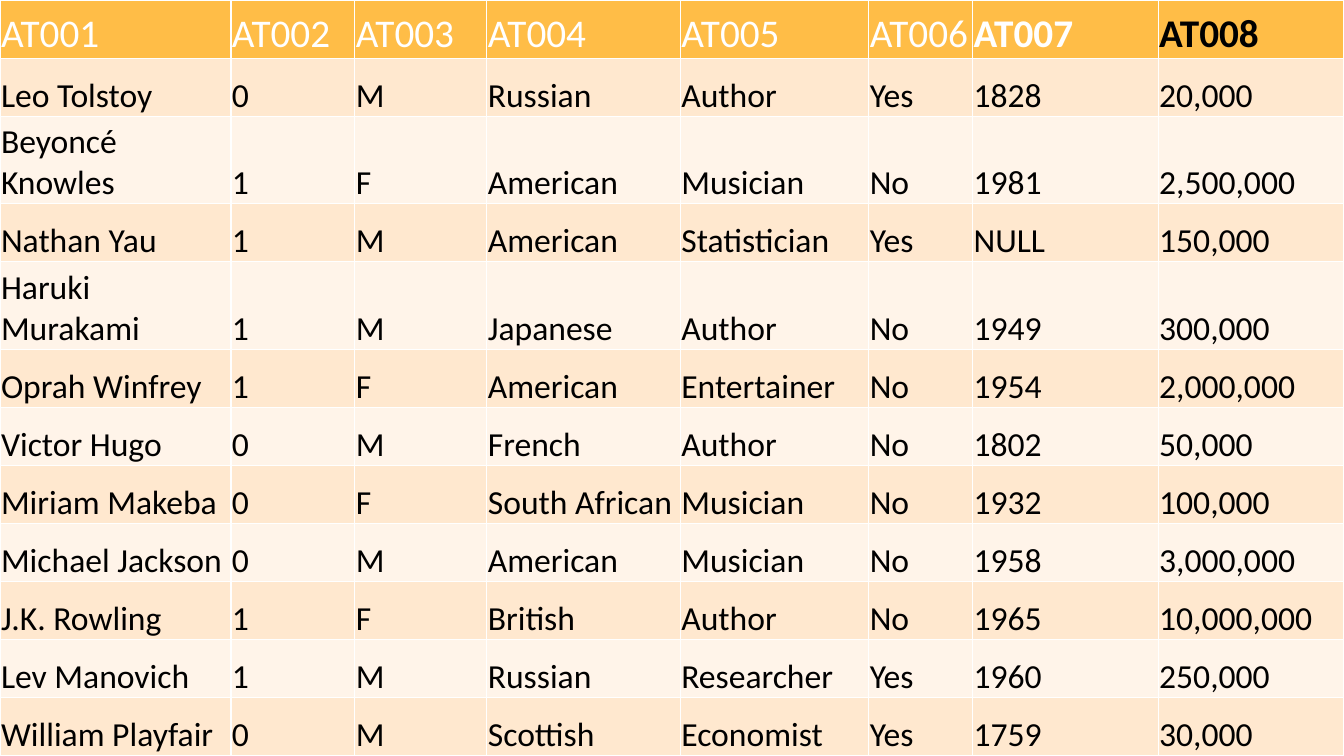
from dataclasses import dataclass

from pptx import Presentation
from pptx.dml.color import RGBColor
from pptx.enum import text
from pptx.util import Pt


@dataclass
class Theme:
    font: str = "Calibri"
    header_size: int = 28
    body_size: int = 24
    header_fill: str = "FFBD47"
    bands: tuple = ("FFE8CF", "FFF4E9")
    light: str = "FFFFFF"
    dark: str = "000000"


theme = Theme()

headers = [f"AT00{n}" for n in range(1, 9)]
people = [
    ("Leo Tolstoy", "0", "M", "Russian", "Author", "Yes", "1828", "20,000"),
    ("Beyoncé Knowles", "1", "F", "American", "Musician", "No", "1981", "2,500,000"),
    ("Nathan Yau", "1", "M", "American", "Statistician", "Yes", "NULL", "150,000"),
    ("Haruki Murakami", "1", "M", "Japanese", "Author", "No", "1949", "300,000"),
    ("Oprah Winfrey", "1", "F", "American", "Entertainer", "No", "1954", "2,000,000"),
    ("Victor Hugo", "0", "M", "French", "Author", "No", "1802", "50,000"),
    ("Miriam Makeba", "0", "F", "South African", "Musician", "No", "1932", "100,000"),
    ("Michael Jackson", "0", "M", "American", "Musician", "No", "1958", "3,000,000"),
    ("J.K. Rowling", "1", "F", "British", "Author", "No", "1965", "10,000,000"),
    ("Lev Manovich", "1", "M", "Russian", "Researcher", "Yes", "1960", "250,000"),
    ("William Playfair", "0", "M", "Scottish", "Economist", "Yes", "1759", "30,000"),
]
wrapped_names = ("Beyoncé Knowles", "Haruki Murakami")
col_widths = [165, 88.5, 94.3, 138.2, 134.6, 74.2, 132.6, 132.6]
row_height, tall_row_height = 41.5, 62.5

# Slide
prs = Presentation()
prs.slide_width, prs.slide_height = Pt(960), Pt(540)
s = prs.slides.add_slide(prs.slide_layouts[6])

# Table grid; its default style draws the white borders
rows = [headers, *people]
table = s.shapes.add_table(
    len(rows), len(headers), 0, 0, Pt(960), Pt(540)).table
for column, width in zip(table.columns, col_widths):
    column.width = Pt(width)

# Cells
for i, values in enumerate(rows):
    is_header = i == 0
    tall = values[0] in wrapped_names
    table.rows[i].height = Pt(tall_row_height if tall else row_height)
    fill = theme.header_fill if is_header else theme.bands[(i - 1) % 2]
    for j, value in enumerate(values):
        cell = table.cell(i, j)
        cell.fill.solid()
        cell.fill.fore_color.rgb = RGBColor.from_string(fill)
        cell.vertical_anchor = text.MSO_ANCHOR.BOTTOM
        cell.margin_left = cell.margin_right = cell.margin_top = Pt(0.75)
        cell.margin_bottom = 0
        cell.text = value
        font = cell.text_frame.paragraphs[0].font
        font.name = theme.font
        font.size = Pt(theme.header_size if is_header else theme.body_size)
        font.bold = is_header and value in ("AT007", "AT008")
        light = is_header and value != "AT008"
        font.color.rgb = RGBColor.from_string(theme.light if light else theme.dark)

prs.save("out.pptx")
